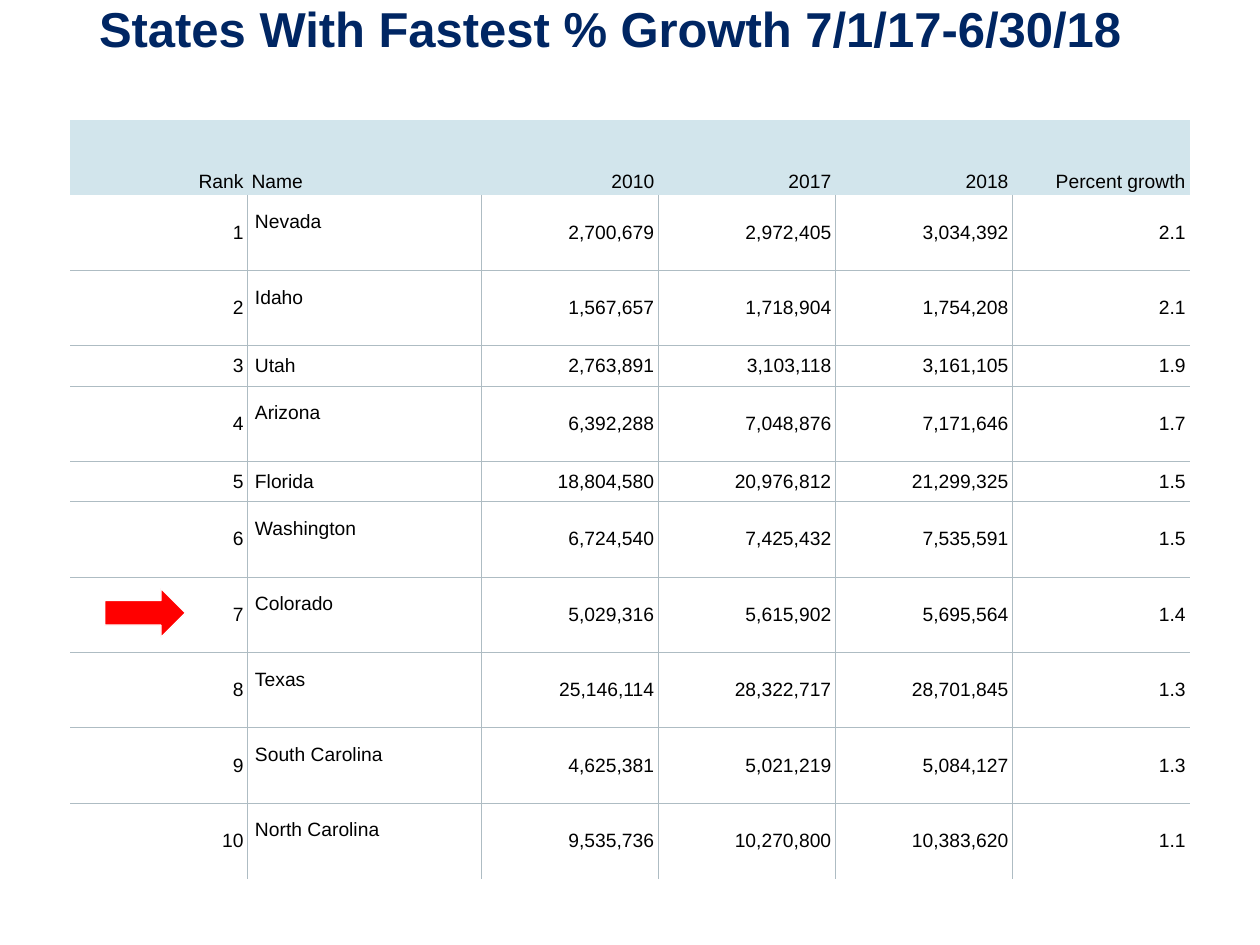
from lxml.etree import SubElement
from pptx import Presentation
from pptx.dml.color import RGBColor
from pptx.enum.shapes import MSO_SHAPE as Shape
from pptx.enum.text import MSO_ANCHOR as Anchor, MSO_AUTO_SIZE as Fit, PP_ALIGN as Align
from pptx.oxml.ns import qn
from pptx.util import Cm, Pt

HEAD = ["Rank", "Name", "2010", "2017", "2018", "Percent growth"]
STATES = [
    ["1", "Nevada", "2,700,679", "2,972,405", "3,034,392", "2.1"],
    ["2", "Idaho", "1,567,657", "1,718,904", "1,754,208", "2.1"],
    ["3", "Utah", "2,763,891", "3,103,118", "3,161,105", "1.9"],
    ["4", "Arizona", "6,392,288", "7,048,876", "7,171,646", "1.7"],
    ["5", "Florida", "18,804,580", "20,976,812", "21,299,325", "1.5"],
    ["6", "Washington", "6,724,540", "7,425,432", "7,535,591", "1.5"],
    ["7", "Colorado", "5,029,316", "5,615,902", "5,695,564", "1.4"],
    ["8", "Texas", "25,146,114", "28,322,717", "28,701,845", "1.3"],
    ["9", "South Carolina", "4,625,381", "5,021,219", "5,084,127", "1.3"],
    ["10", "North Carolina", "9,535,736", "10,270,800", "10,383,620", "1.1"],
]
LOW = ("Utah", "Florida")
MARKED = "Colorado"
NAME = HEAD.index("Name")
WIDTHS = [4.71 if name == "Name" else 3.57 for name in HEAD]
HEIGHTS = [0.81 if row[NAME] in LOW else 1.52 for row in [HEAD] + STATES]


def color(code):
    return RGBColor.from_string(code)


def style(par, size, code, align, bold=False):
    par.alignment = align
    for run in par.runs:
        font = run.font
        font.name, font.size, font.bold = "Arial", Pt(size), bold
        font.color.rgb = color(code)


def add_title(slide, left, top, width, height):
    title = slide.shapes.title
    title.left, title.top = Cm(left), Cm(top)
    title.width, title.height = Cm(width), Cm(height)
    frame = title.text_frame
    frame.text = "States With Fastest % Growth 7/1/17-6/30/18 "
    frame.word_wrap, frame.auto_size = True, Fit.NONE
    frame.vertical_anchor = Anchor.TOP
    frame.margin_left = frame.margin_right = 0
    frame.margin_top = frame.margin_bottom = 0
    style(frame.paragraphs[0], 28, "002663", Align.CENTER, True)


def set_borders(cell, sides):
    """Rule the sides named by letter (L, R, T, B) and clear the others."""
    props = cell._tc.get_or_add_tcPr()
    for place, side in enumerate("LRTB"):
        line = SubElement(props, qn("a:ln" + side), w=str(Pt(0.5)))
        if side in sides:
            fill = SubElement(line, qn("a:solidFill"))
            SubElement(fill, qn("a:srgbClr"), val="AEBCC3")
        else:
            SubElement(line, qn("a:noFill"))
        props.insert(place, line)


def fill_cell(cell, text, row, col):
    head, name = row == 0, col == NAME
    cell.text_frame.text = text
    style(cell.text_frame.paragraphs[0], 11, "000000",
          Align.LEFT if name else Align.RIGHT)
    cell.vertical_anchor = Anchor.BOTTOM if head else Anchor.MIDDLE
    cell.margin_left = Cm(0.15 if name and not head else 0.08)
    cell.margin_right = Cm(0.08)
    cell.margin_top = Cm(0.05)
    raised = name and not head and text not in LOW
    cell.margin_bottom = Cm(0.48 if raised else 0.05)
    if head:
        cell.fill.solid()
        cell.fill.fore_color.rgb = color("D2E5EC")
        set_borders(cell, "")
    else:
        cell.fill.background()
        inner = {"L": col > 0, "R": col < len(HEAD) - 1,
                 "T": row > 1, "B": row < len(STATES)}
        set_borders(cell, [side for side, ruled in inner.items() if ruled])


def add_grid(slide, left, top):
    rows = [HEAD] + STATES
    table = slide.shapes.add_table(
        len(rows), len(HEAD), Cm(left), Cm(top),
        Cm(sum(WIDTHS)), Cm(sum(HEIGHTS))).table
    table.first_row = table.horz_banding = False
    for col, width in zip(table.columns, WIDTHS):
        col.width = Cm(width)
    for row, height in zip(table.rows, HEIGHTS):
        row.height = Cm(height)
    for r, row in enumerate(rows):
        for c, text in enumerate(row):
            fill_cell(table.cell(r, c), text, r, c)


def add_marker(slide, left, top):
    """Point an arrow at the marked state's rank in the grid at left, top."""
    row = 1 + [state[NAME] for state in STATES].index(MARKED)
    arrow = slide.shapes.add_shape(
        Shape.RIGHT_ARROW, Cm(left + 0.69), Cm(top + sum(HEIGHTS[:row]) + 0.23),
        Cm(1.63), Cm(0.99))
    arrow.shadow.inherit = False
    arrow.fill.solid()
    arrow.fill.fore_color.rgb = color("FF0000")
    arrow.line.color.rgb = color("FFFFFF")
    arrow.line.width = Pt(0.75)


def main():
    deck = Presentation()
    deck.slide_width, deck.slide_height = Cm(25.4), Cm(19.05)
    slide = deck.slides.add_slide(deck.slide_layouts.get_by_name("Title Only"))
    add_title(slide, 0, -0.03, 24.87, 2.44)
    grid = 1.42, 2.41
    add_grid(slide, *grid)
    add_marker(slide, *grid)
    deck.save("out.pptx")


if __name__ == "__main__":
    main()
